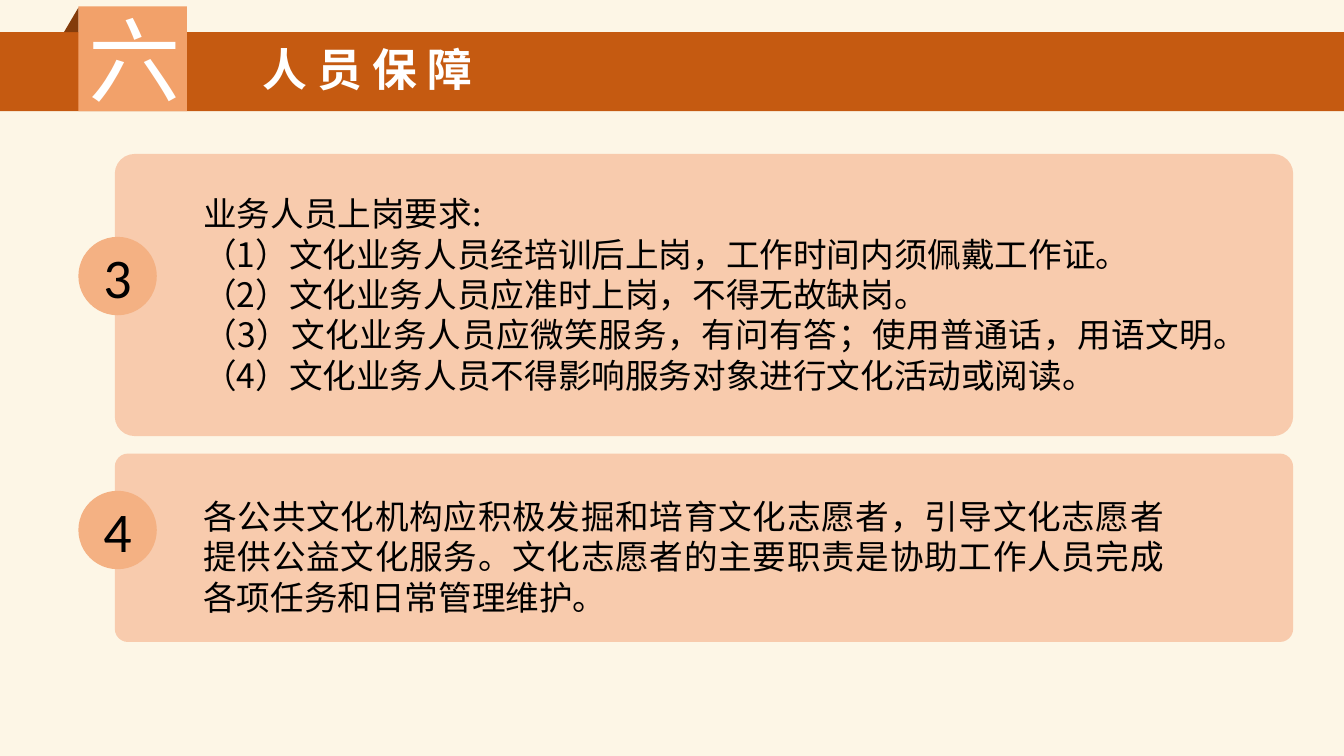
from lxml.etree import SubElement
from pptx import Presentation
from pptx.dml.color import RGBColor
from pptx.enum.shapes import MSO_SHAPE
from pptx.enum.text import MSO_ANCHOR, MSO_AUTO_SIZE, PP_ALIGN
from pptx.oxml.ns import qn
from pptx.util import Pt

theme = {
    "background": "FDF6E6", "banner": "C55A11", "tab": "F2A16A", "fold": "843C0B",
    "panel": "F8CBAD", "badge": "F4B183", "light": "FFFFFF", "dark": "000000",
    "numeral_size": 66, "title_size": 32, "body_size": 24, "badge_size": 40,
    "numeral_font": "Roboto", "text_font": "Noto Sans CJK SC", "badge_font": "Calibri",
}

prs = Presentation()
prs.slide_width, prs.slide_height = Pt(960), Pt(540)
s = prs.slides.add_slide(prs.slide_layouts[6])
s.background.fill.solid()
s.background.fill.fore_color.rgb = RGBColor.from_string(theme["background"])


def add_block(kind, box, color):
    sp = s.shapes.add_shape(kind, *map(Pt, box))
    sp.shadow.inherit = False
    sp.fill.solid()
    sp.fill.fore_color.rgb = RGBColor.from_string(theme[color])
    sp.line.fill.background()
    return sp


def write(sp, lines, style, color, align=PP_ALIGN.LEFT, bold=False, **frame):
    tf = sp.text_frame
    for name, value in frame.items():
        setattr(tf, name, value)
    for i, line in enumerate(lines):
        p = tf.paragraphs[0] if i == 0 else tf.add_paragraph()
        p.alignment = align
        r = p.add_run()
        r.text = line
        font = theme[f"{style}_font"] if style != "title" and style != "body" else theme["text_font"]
        formats = {"size": Pt(theme[f"{style}_size"]), "bold": bold, "name": font}
        for name, value in formats.items():
            setattr(r.font, name, value)
        r.font.color.rgb = RGBColor.from_string(theme[color])
        # East Asian characters need their own typeface entry
        SubElement(r.font._element, qn("a:ea"), typeface=font)


# Header banner with numbered tab and folded corner
add_block(MSO_SHAPE.RECTANGLE, (0, 23, 960, 56.5), "banner")
add_block(MSO_SHAPE.RECTANGLE, (56, 4.5, 77.5, 75), "tab")
fold = add_block(MSO_SHAPE.RIGHT_TRIANGLE, (45.7, 5.5, 10.3, 17.5), "fold")
fold.element.spPr.xfrm.set("flipH", "1")

fit = {"auto_size": MSO_AUTO_SIZE.SHAPE_TO_FIT_TEXT}
numeral = s.shapes.add_textbox(*map(Pt, (56, -1.5, 70, 87)))
write(numeral, ["六"], "numeral", "light", word_wrap=True, **fit)
title = s.shapes.add_textbox(*map(Pt, (180.7, 26.5, 173, 46)))
write(title, ["人 员 保 障"], "title", "light", bold=True, word_wrap=False, **fit)

# Numbered panels: number, panel top and height, text top, width and height, badge top
panels = [
    ("3", 110, 201.5, 134.6, 736.5, 152.6, 169.2, [
        "业务人员上岗要求:",
        "（1）文化业务人员经培训后上岗，工作时间内须佩戴工作证。",
        "（2）文化业务人员应准时上岗，不得无故缺岗。",
        "（3）文化业务人员应微笑服务，有问有答；使用普通话，用语文明。",
        "（4）文化业务人员不得影响服务对象进行文化活动或阅读。",
    ]),
    ("4", 324, 134.6, 350.6, 700.5, 94.3, 350.6, [
        "各公共文化机构应积极发掘和培育文化志愿者，引导文化志愿者提供公益文化服务。"
        "文化志愿者的主要职责是协助工作人员完成各项任务和日常管理维护。",
    ]),
]
for number, top, height, text_top, text_width, text_height, badge_top, lines in panels:
    panel = add_block(MSO_SHAPE.ROUNDED_RECTANGLE, (82, top, 841.7, height), "panel")
    panel.adjustments[0] = 0.07
    body = s.shapes.add_textbox(*map(Pt, (138.2, text_top, text_width, text_height)))
    write(body, lines, "body", "dark", PP_ALIGN.JUSTIFY, word_wrap=True, **fit)
    badge = add_block(MSO_SHAPE.OVAL, (56, badge_top, 56, 56), "badge")
    write(badge, [number], "badge", "dark", PP_ALIGN.CENTER,
          vertical_anchor=MSO_ANCHOR.MIDDLE)

prs.save("out.pptx")
